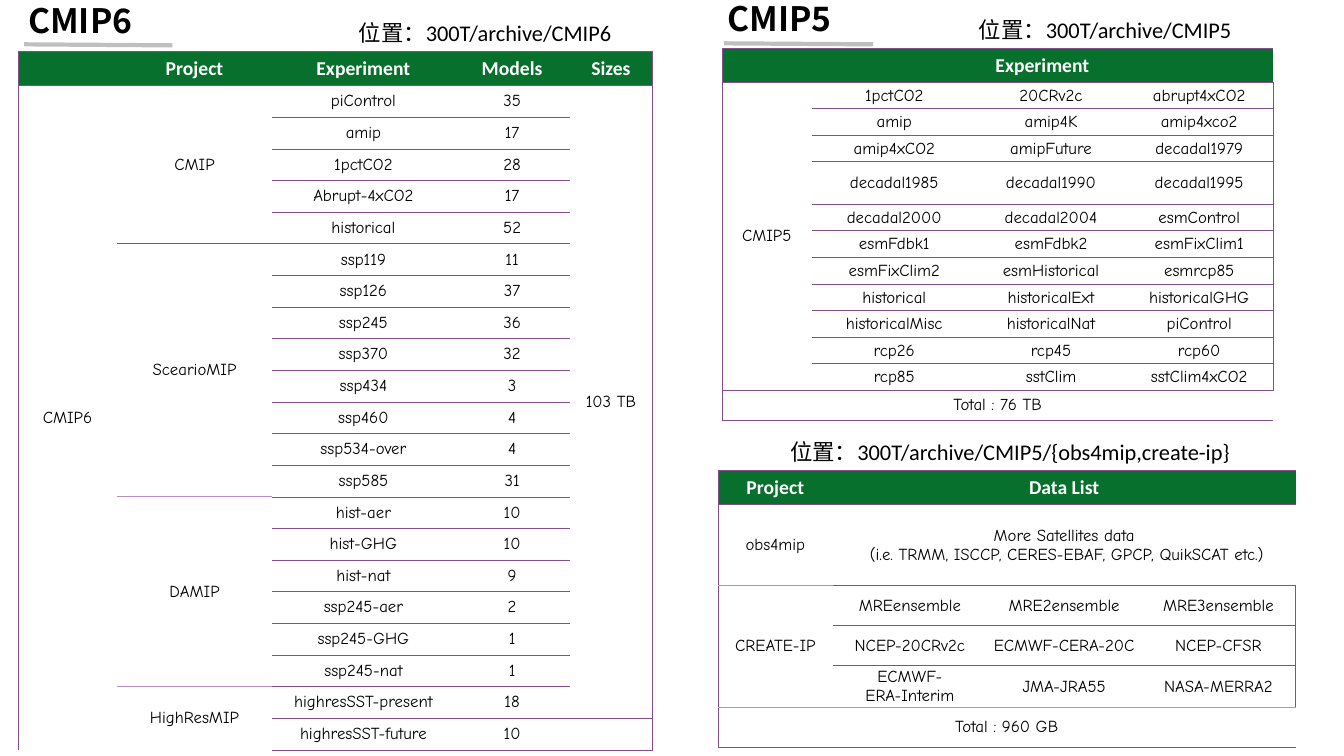
from dataclasses import dataclass, field

from lxml import etree
from pptx import Presentation
from pptx.dml.color import RGBColor
from pptx.enum.shapes import MSO_CONNECTOR
from pptx.enum.text import MSO_ANCHOR, MSO_AUTO_SIZE, PP_ALIGN
from pptx.oxml.ns import qn
from pptx.util import Inches, Pt

STRAIGHT = MSO_CONNECTOR.STRAIGHT
TOP, MIDDLE = MSO_ANCHOR.TOP, MSO_ANCHOR.MIDDLE
GROW = MSO_AUTO_SIZE.SHAPE_TO_FIT_TEXT
LEFT, CENTER = PP_ALIGN.LEFT, PP_ALIGN.CENTER


@dataclass(frozen=True)
class TextStyle:
    font: str
    size: float
    color: str = "000000"
    bold: bool = False


@dataclass(frozen=True)
class Theme:
    heading: TextStyle = TextStyle("Noto Sans CJK TC", 24, bold=True)
    caption: TextStyle = TextStyle("Calibri", 16)
    header: TextStyle = TextStyle("Calibri", 14, "FFFFFF", True)
    body: TextStyle = TextStyle("Comic Neue", 12)
    header_fill: str = "07702C"
    underline: str = "BFBFBF"
    rule: tuple[str, float] = ("824F8C", 0.5)
    light_rule: tuple[str, float] = ("B88FC0", 0.75)


THEME = Theme()


@dataclass(frozen=True)
class Label:
    text: str
    left: float
    top: float
    width: float
    height: float
    style: TextStyle


@dataclass(frozen=True)
class Grid:
    left: float
    top: float
    widths: list[float]
    heights: list[float]
    rows: list[list[str]]
    spans: dict[tuple[int, int], tuple[int, int]]  # cell -> rows, columns
    light_tops: set[tuple[int, int]] = field(default_factory=set)
    tight: bool = False


# Content
PROJECTS = {
    "CMIP": [("piControl", 35), ("amip", 17), ("1pctCO2", 28), ("Abrupt-4xCO2", 17),
             ("historical", 52)],
    "ScearioMIP": [("ssp119", 11), ("ssp126", 37), ("ssp245", 36), ("ssp370", 32),
                   ("ssp434", 3), ("ssp460", 4), ("ssp534-over", 4), ("ssp585", 31)],
    "DAMIP": [("hist-aer", 10), ("hist-GHG", 10), ("hist-nat", 9), ("ssp245-aer", 2),
              ("ssp245-GHG", 1), ("ssp245-nat", 1)],
    "HighResMIP": [("highresSST-present", 18), ("highresSST-future", 10)],
}
CMIP5_EXPERIMENTS = [
    ["1pctCO2", "20CRv2c", "abrupt4xCO2"],
    ["amip", "amip4K", "amip4xco2"],
    ["amip4xCO2", "amipFuture", "decadal1979"],
    ["decadal1985", "decadal1990", "decadal1995"],
    ["decadal2000", "decadal2004", "esmControl"],
    ["esmFdbk1", "esmFdbk2", "esmFixClim1"],
    ["esmFixClim2", "esmHistorical", "esmrcp85"],
    ["historical", "historicalExt", "historicalGHG"],
    ["historicalMisc", "historicalNat", "piControl"],
    ["rcp26", "rcp45", "rcp60"],
    ["rcp85", "sstClim", "sstClim4xCO2"],
]
SATELLITES = "More Satellites data\n (i.e. TRMM, ISCCP, CERES-EBAF, GPCP, QuikSCAT etc.)"
TITLE = Label("CMIP6", 0.18, -0.05, 1.6, 0.5, THEME.heading)
LABELS = [
    Label("CMIP5", 7.12, -0.07, 1.6, 0.5, THEME.heading),
    Label("位置：300T/archive/CMIP6", 3.46, 0.14, 3.25, 0.37, THEME.caption),
    Label("位置：300T/archive/CMIP5", 9.61, 0.11, 3.49, 0.37, THEME.caption),
    Label("位置：300T/archive/CMIP5/{obs4mip,create-ip}", 7.74, 4.3, 5.24, 0.37,
          THEME.caption),
]
UNDERLINES = [(0.24, 0.44, 1.71, 0.45), (7.18, 0.43, 8.66, 0.44)]


def cmip6_grid() -> Grid:
    rows = [["", "Project", "Experiment", "Models", "Sizes"]]
    spans = {(1, 0): (21, 1), (1, 4): (20, 1)}
    for project, experiments in PROJECTS.items():
        spans[len(rows), 1] = (len(experiments), 1)
        rows += [["", project if index == 0 else "", name, str(models), ""]
                 for index, (name, models) in enumerate(experiments)]
    rows[1][0], rows[1][4] = "CMIP6", "103 TB"
    return Grid(0.18, 0.51, [0.98, 1.54, 1.81, 1.14, 0.82], [0.34] + [6.59 / 21] * 21,
                rows, spans, {(14, 1), (20, 1)})


def cmip5_grid() -> Grid:
    rows = [["", "Experiment", "", ""]]
    rows += [["" if index else "CMIP5", *names]
             for index, names in enumerate(CMIP5_EXPERIMENTS)]
    rows.append(["Total : 76 TB", "", "", ""])
    heights = [0.33] + [2.64 / 10] * 11 + [0.3]
    heights[4] = 0.42
    return Grid(7.16, 0.48, [0.89, 1.64, 1.47, 1.47], heights, rows,
                {(0, 1): (1, 3), (1, 0): (11, 1), (12, 0): (1, 4)}, tight=True)


def observation_grid() -> Grid:
    rows = [
        ["Project", "Data List", "", ""],
        ["obs4mip", SATELLITES, "", ""],
        ["CREATE-IP", "MREensemble", "MRE2ensemble", "MRE3ensemble"],
        ["", "NCEP-20CRv2c", "ECMWF-CERA-20C", "NCEP-CFSR"],
        ["", "ECMWF-\nERA-Interim", "JMA-JRA55", "NASA-MERRA2"],
        ["Total : 960 GB", "", "", ""],
    ]
    spans = {(0, 1): (1, 3), (1, 1): (1, 3), (2, 0): (3, 1), (5, 0): (1, 4)}
    light_tops = {(2, 0)} | {(5, column) for column in range(4)}
    return Grid(7.12, 4.67, [1.14] + [1.53] * 3, [0.33, 0.8] + [0.4] * 4,
                rows, spans, light_tops, tight=True)


def write(frame, text: str, style: TextStyle, align) -> None:
    frame.text = text
    for para in frame.paragraphs:
        para.alignment = align
        para.font.name, para.font.size = style.font, Pt(style.size)
        para.font.bold = style.bold
        para.font.color.rgb = RGBColor.from_string(style.color)


def place_label(box, label: Label) -> None:
    box.left, box.top = Inches(label.left), Inches(label.top)
    box.width, box.height = Inches(label.width), Inches(label.height)
    frame = box.text_frame
    frame.word_wrap, frame.auto_size, frame.vertical_anchor = True, GROW, TOP
    write(frame, label.text, label.style, LEFT)


def add_underline(slide, ends: tuple[float, float, float, float]) -> None:
    line = slide.shapes.add_connector(STRAIGHT, *map(Inches, ends))
    line.line.color.rgb = RGBColor.from_string(THEME.underline)
    line.line.width = Pt(3)
    etree.SubElement(line._element.spPr, qn("a:effectLst"))


def add_border(cell, side: str, rule: tuple[str, float] | None) -> None:
    border = etree.SubElement(cell._tc.get_or_add_tcPr(), qn(f"a:ln{side}"))
    if rule is None:
        etree.SubElement(border, qn("a:noFill"))
        return
    color, width = rule
    border.set("w", str(Pt(width)))
    fill = etree.SubElement(border, qn("a:solidFill"))
    etree.SubElement(fill, qn("a:srgbClr"), val=color)


def add_grid(slide, grid: Grid) -> None:
    last_column = len(grid.widths) - 1
    table = slide.shapes.add_table(
        len(grid.rows), len(grid.widths), Inches(grid.left), Inches(grid.top),
        Inches(sum(grid.widths)), Inches(sum(grid.heights))).table
    table.horz_banding = False
    for column, width in zip(table.columns, grid.widths):
        column.width = Inches(width)
    for row, height in zip(table.rows, grid.heights):
        row.height = Inches(height)

    # First and last row of the merged block around each cell
    blocks = {}
    for (top, left), (height, width) in grid.spans.items():
        table.cell(top, left).merge(table.cell(top + height - 1, left + width - 1))
        for r in range(top, top + height):
            for c in range(left, left + width):
                blocks[r, c] = (top, top + height - 1)

    for r, texts in enumerate(grid.rows):
        for c, text in enumerate(texts):
            cell = table.cell(r, c)
            first, last = blocks.get((r, c), (r, r))
            above, below = (THEME.light_rule if (edge, c) in grid.light_tops
                            else THEME.rule for edge in (r, r + 1))
            add_border(cell, "L", THEME.rule if c == 0 else None)
            add_border(cell, "R", THEME.rule if c == last_column else None)
            add_border(cell, "T", above if r == first else None)
            add_border(cell, "B", below if r == last else None)
            if r == 0:
                cell.fill.solid()
                cell.fill.fore_color.rgb = RGBColor.from_string(THEME.header_fill)
            else:
                cell.fill.background()
            cell.vertical_anchor = MIDDLE
            if grid.tight and r > 0 and c > 0:
                cell.margin_left = cell.margin_right = cell.margin_top = Inches(0.01)
                cell.margin_bottom = 0
            write(cell.text_frame, text, THEME.body if r else THEME.header, CENTER)


def main() -> None:
    deck = Presentation()
    deck.slide_width, deck.slide_height = Inches(13.33), Inches(7.5)
    page = deck.slides.add_slide(deck.slide_layouts[5])

    # Headings and locations
    for ends in UNDERLINES:
        add_underline(page, ends)
    place_label(page.shapes.title, TITLE)
    for label in LABELS:
        place_label(page.shapes.add_textbox(0, 0, 0, 0), label)

    # Tables
    for grid in (cmip6_grid(), cmip5_grid(), observation_grid()):
        add_grid(page, grid)
    deck.save("out.pptx")


if __name__ == "__main__":
    main()
